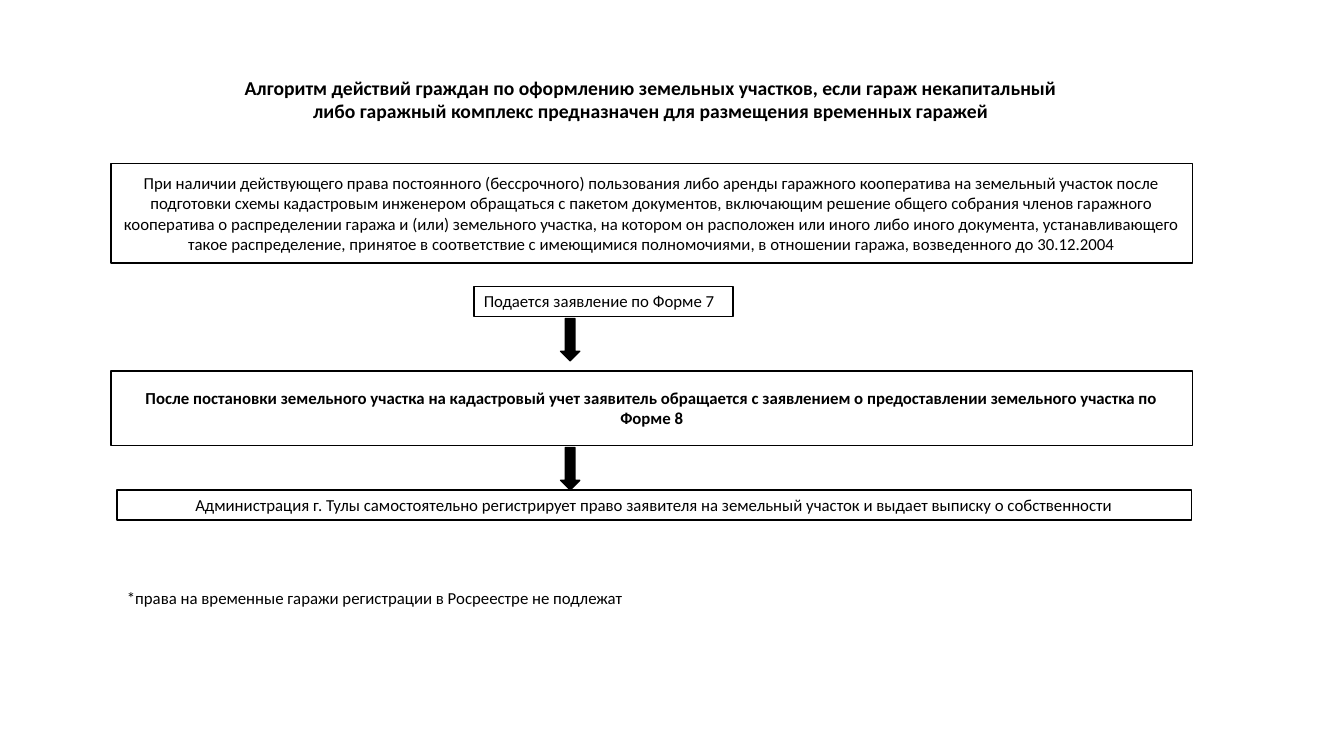
import pptx
import pptx.dml.color
import pptx.enum.shapes
import pptx.enum.text
import pptx.util
from dataclasses import dataclass

EMU_PER_PX = 9144  # 100 px to the inch
SHAPES = pptx.enum.shapes.MSO_SHAPE
ALIGN = pptx.enum.text.PP_ALIGN
ANCHOR = pptx.enum.text.MSO_ANCHOR


@dataclass(frozen=True)
class Theme:
    font: str = "Calibri"
    ink: str = "000000"
    paper: str = "FFFFFF"
    title_size: int = 14
    body_size: int = 12
    line_width: int = 1


THEME = Theme()

TITLE = ("Алгоритм действий граждан по оформлению земельных участков, если гараж некапитальный "
         "либо гаражный комплекс предназначен для размещения временных гаражей")
CONDITION = ("При наличии действующего права постоянного (бессрочного) пользования либо аренды "
             "гаражного кооператива на земельный участок после подготовки схемы кадастровым "
             "инженером обращаться с пакетом документов, включающим решение общего собрания "
             "членов гаражного кооператива о распределении гаража и (или) земельного участка, "
             "на котором он расположен или иного либо иного документа, устанавливающего такое "
             "распределение, принятое в соответствие с имеющимися полномочиями, в отношении "
             "гаража, возведенного до 30.12.2004")
FORM_7 = "Подается заявление по Форме 7"
FORM_8 = ("После постановки земельного участка на кадастровый учет заявитель обращается "
          "с заявлением о предоставлении земельного участка по Форме 8")
REGISTRATION = ("Администрация г. Тулы самостоятельно регистрирует право заявителя "
                "на земельный участок и выдает выписку о собственности")
FOOTNOTE = "*права на временные гаражи регистрации в Росреестре не подлежат"


def px(length):
    return pptx.util.Emu(length * EMU_PER_PX)


def color(value):
    return pptx.dml.color.RGBColor.from_string(value)


def write_text(shape, text, size=THEME.body_size, bold=False, align=ALIGN.CENTER,
               anchor=ANCHOR.TOP):
    text_frame = shape.text_frame
    text_frame.word_wrap = True
    text_frame.vertical_anchor = anchor
    text_frame.text = text
    paragraph = text_frame.paragraphs[0]
    paragraph.alignment = align
    font = paragraph.runs[0].font
    font.name = THEME.font
    font.size = pptx.util.Pt(size)
    font.bold = bold
    font.color.rgb = color(THEME.ink)


def add_label(slide, bounds, text, **style):
    label = slide.shapes.add_textbox(*map(px, bounds))
    write_text(label, text, **style)


def add_outlined(slide, kind, bounds, fill):
    shape = slide.shapes.add_shape(kind, *map(px, bounds))
    shape.shadow.inherit = False
    shape.fill.solid()
    shape.fill.fore_color.rgb = color(fill)
    shape.line.color.rgb = color(THEME.ink)
    shape.line.width = pptx.util.Pt(THEME.line_width)
    return shape


def add_step(slide, bounds, text, **style):
    step = add_outlined(slide, SHAPES.RECTANGLE, bounds, THEME.paper)
    write_text(step, text, **style)


def add_down_arrow(slide, top):
    add_outlined(slide, SHAPES.DOWN_ARROW, (556, top, 19, 42), THEME.ink)


def main():
    presentation = pptx.Presentation()
    presentation.slide_width = px(1333)
    presentation.slide_height = px(750)
    slide = presentation.slides.add_slide(presentation.slide_layouts[6])

    # Title
    add_label(slide, (212, 70, 867, 57), TITLE, size=THEME.title_size, bold=True)

    # Steps
    add_step(slide, (110, 162, 1073, 99), CONDITION, anchor=ANCHOR.MIDDLE)
    add_step(slide, (470, 284, 257, 30), FORM_7, align=ALIGN.LEFT)
    add_step(slide, (110, 368, 1073, 74), FORM_8, bold=True, anchor=ANCHOR.MIDDLE)
    add_step(slide, (116, 486, 1066, 30), REGISTRATION)

    # Arrows between the steps
    for top in (316, 444):
        add_down_arrow(slide, top)

    # Footnote
    add_label(slide, (116, 578, 549, 30), FOOTNOTE, align=ALIGN.LEFT)

    presentation.save("out.pptx")


if __name__ == "__main__":
    main()
